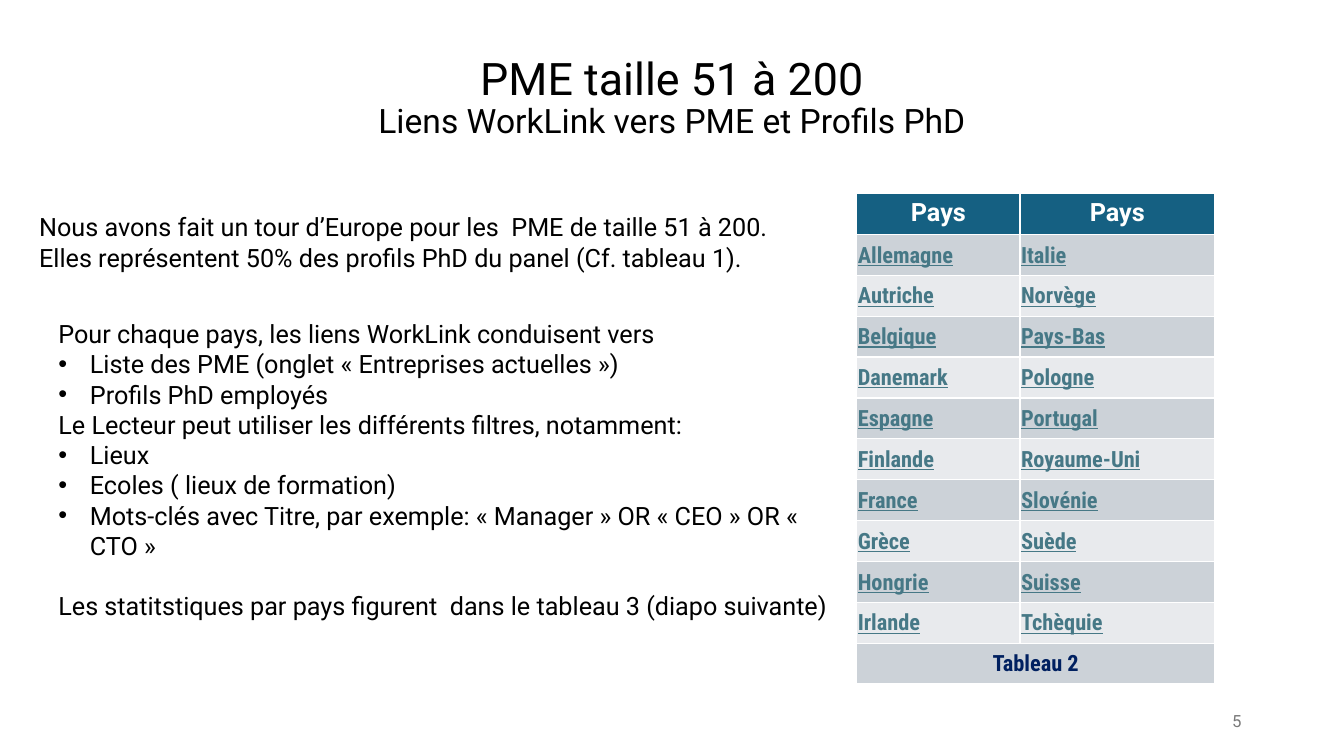
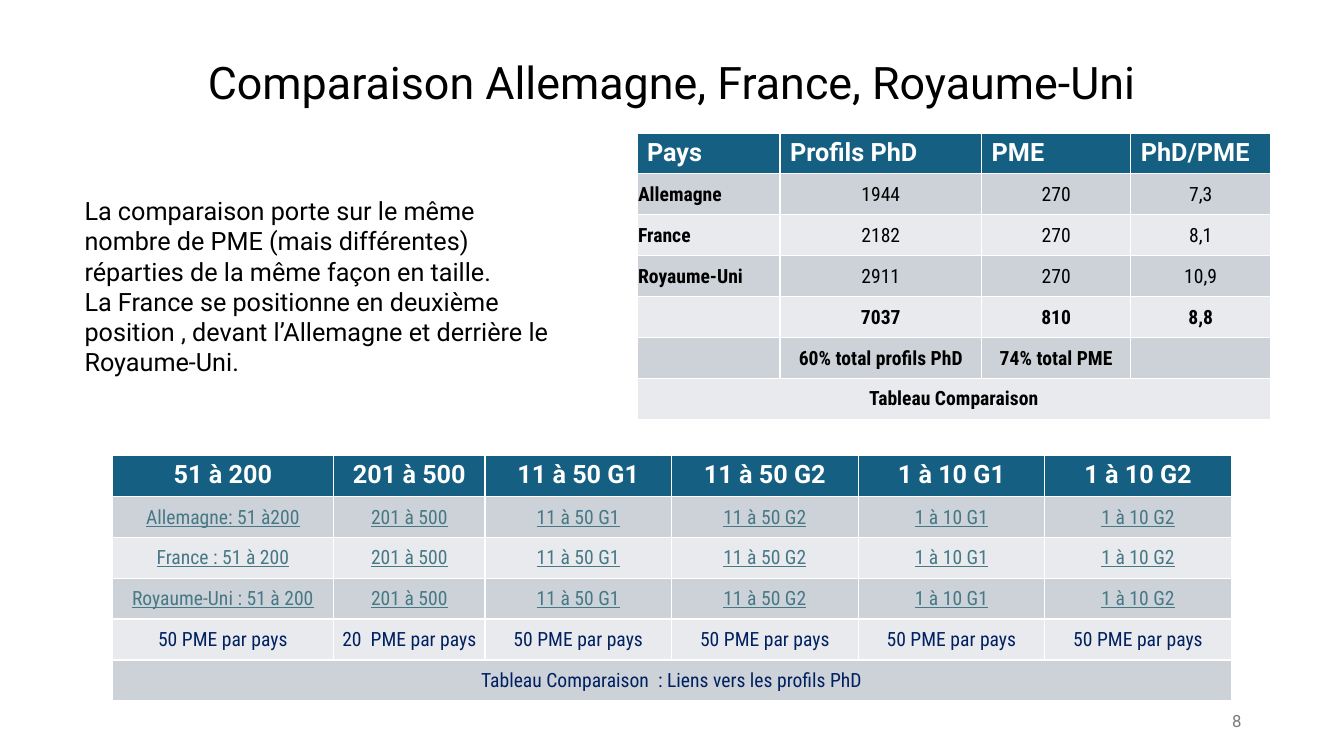
from dataclasses import dataclass, replace
from typing import Optional

from lxml.etree import SubElement
from pptx import Presentation
from pptx.dml.color import RGBColor
from pptx.enum.text import MSO_ANCHOR, MSO_AUTO_SIZE, PP_ALIGN
from pptx.oxml.ns import qn
from pptx.presentation import Presentation as Deck
from pptx.slide import Slide
from pptx.text.text import Font
from pptx.util import Pt

ROW_HEIGHT = 29.2
BULLET_INDENT = 22.5
HEADER_FILL = "156082"
BAND_FILLS = ("CCD2D8", "E8EAED")
LINK_COLOR = "467886"
NAVY = "002060"


@dataclass(frozen=True)
class TextStyle:
    size: float
    color: str = "000000"
    font: str = "Roboto"
    bold: bool = False
    underline: bool = False
    align: PP_ALIGN = PP_ALIGN.LEFT


@dataclass(frozen=True)
class Box:
    left: float
    top: float
    width: float
    height: float


@dataclass(frozen=True)
class Line:
    text: str
    bullet: bool = False
    space_before: float = 0


@dataclass(frozen=True)
class Row:
    """A row of cells; a single text spans the whole table."""
    texts: tuple[str, ...]
    style: TextStyle
    first_style: Optional[TextStyle] = None


BODY = TextStyle(18)
PAGE_NUMBER = TextStyle(12, "797979", align=PP_ALIGN.RIGHT)
HEADER_LEFT = TextStyle(18, "FFFFFF", bold=True)
HEADER = replace(HEADER_LEFT, align=PP_ALIGN.CENTER)
COUNTRY_LINK = TextStyle(16, LINK_COLOR, "Roboto Condensed", True, True)
COUNTRY_CAPTION = replace(COUNTRY_LINK, color=NAVY, underline=False, align=PP_ALIGN.CENTER)
FIGURE = TextStyle(14, font="Roboto Condensed", align=PP_ALIGN.CENTER)
TOTAL = replace(FIGURE, bold=True)
COUNTRY_NAME = replace(TOTAL, align=PP_ALIGN.LEFT)
PROFILE_LINK = replace(FIGURE, color=LINK_COLOR, underline=True)
PROFILE_NOTE = replace(FIGURE, color=NAVY)


def rgb(color: str) -> RGBColor:
    return RGBColor.from_string(color)


def apply_font(font: Font, style: TextStyle) -> None:
    font.name = style.font
    font.size = Pt(style.size)
    font.bold = style.bold
    font.underline = style.underline
    font.color.rgb = rgb(style.color)


def add_titled_slide(presentation: Deck, title_lines: list[tuple[str, float]],
                     title_height: float, number: str) -> Slide:
    """Add a slide with its title, given as (text, size) lines, and page number."""
    slide = presentation.slides.add_slide(presentation.slide_layouts[5])
    title = slide.shapes.title
    title.left, title.top = Pt(66), Pt(28.8)
    title.width, title.height = Pt(828), Pt(title_height)
    frame = title.text_frame
    frame.auto_size = MSO_AUTO_SIZE.NONE
    frame.vertical_anchor = MSO_ANCHOR.MIDDLE
    paragraph = frame.paragraphs[0]
    paragraph.alignment = PP_ALIGN.CENTER
    paragraph.line_spacing = 0.9
    for index, (text, size) in enumerate(title_lines):
        if index:
            paragraph.add_line_break()
        run = paragraph.add_run()
        run.text = text
        apply_font(run.font, TextStyle(size))
    add_text(slide, Box(678, 500.4, 216, 28.8), [Line(number)], PAGE_NUMBER, MSO_ANCHOR.MIDDLE)
    return slide


def add_text(slide: Slide, box: Box, lines: list[Line], style: TextStyle = BODY,
             anchor: MSO_ANCHOR = MSO_ANCHOR.TOP) -> None:
    shape = slide.shapes.add_textbox(Pt(box.left), Pt(box.top), Pt(box.width), Pt(box.height))
    frame = shape.text_frame
    frame.word_wrap = True
    frame.vertical_anchor = anchor
    for index, line in enumerate(lines):
        paragraph = frame.add_paragraph() if index else frame.paragraphs[0]
        paragraph.text = line.text
        paragraph.alignment = style.align
        if line.space_before:
            paragraph.space_before = Pt(line.space_before)
        if line.bullet:
            properties = paragraph._p.get_or_add_pPr()
            properties.set("marL", str(Pt(BULLET_INDENT)))
            properties.set("indent", str(-Pt(BULLET_INDENT)))
            SubElement(properties, qn("a:buFont"), typeface="Arial")
            SubElement(properties, qn("a:buChar"), char="•")
        apply_font(paragraph.font, style)


def add_table(slide: Slide, left: float, top: float, widths: list[float],
              rows: list[Row]) -> None:
    """Add a table whose first row is the header and whose other rows are banded."""
    table = slide.shapes.add_table(len(rows), len(widths), Pt(left), Pt(top),
                                   Pt(sum(widths)), Pt(ROW_HEIGHT * len(rows))).table
    table.horz_banding = False
    for column, width in zip(table.columns, widths):
        column.width = Pt(width)
    for row_index, row in enumerate(rows):
        table.rows[row_index].height = Pt(ROW_HEIGHT)
        if len(row.texts) == 1:
            table.cell(row_index, 0).merge(table.cell(row_index, len(widths) - 1))
        for column_index, text in enumerate(row.texts):
            cell = table.cell(row_index, column_index)
            cell.fill.solid()
            if row_index == 0:
                cell.fill.fore_color.rgb = rgb(HEADER_FILL)
            else:
                cell.fill.fore_color.rgb = rgb(BAND_FILLS[(row_index - 1) % 2])
                cell.vertical_anchor = MSO_ANCHOR.MIDDLE
                cell.margin_left = cell.margin_right = cell.margin_top = Pt(0.75)
                cell.margin_bottom = 0
            style = row.first_style if row.first_style and column_index == 0 else row.style
            paragraph = cell.text_frame.paragraphs[0]
            paragraph.text = text
            paragraph.alignment = style.align
            apply_font(paragraph.font, style)


def build_links_slide(presentation: Deck) -> None:
    slide = add_titled_slide(
        presentation,
        [("PME taille 51 à 200", 32), ("Liens WorkLink vers PME et Profils PhD", 24)],
        83.5, "5")
    countries = [
        ("Allemagne", "Italie"), ("Autriche", "Norvège"), ("Belgique", "Pays-Bas"),
        ("Danemark", "Pologne"), ("Espagne", "Portugal"), ("Finlande", "Royaume-Uni"),
        ("France", "Slovénie"), ("Grèce", "Suède"), ("Hongrie", "Suisse"),
        ("Irlande", "Tchèquie"),
    ]
    add_table(slide, 612, 138.25, [116.6, 139], [
        Row(("Pays", "Pays"), HEADER),
        *(Row(pair, COUNTRY_LINK) for pair in countries),
        Row(("Tableau 2",), COUNTRY_CAPTION),
    ])
    add_text(slide, Box(20.9, 147.6, 545, 51), [
        Line("Nous avons fait un tour d’Europe pour les  PME de taille 51 à 200."),
        Line("Elles représentent 50% des profils PhD du panel (Cf. tableau 1)."),
    ])
    add_text(slide, Box(34.6, 224, 570.2, 203.8), [
        Line("Pour chaque pays, les liens WorkLink conduisent vers"),
        Line("Liste des PME (onglet « Entreprises actuelles »)", bullet=True),
        Line("Profils PhD employés", bullet=True),
        Line("Le Lecteur peut utiliser les différents filtres, notamment:"),
        Line("Lieux", bullet=True),
        Line("Ecoles ( lieux de formation)", bullet=True),
        Line("Mots-clés avec Titre, par exemple: « Manager » OR « CEO » OR « CTO »",
             bullet=True),
        Line("Les statitstiques par pays figurent  dans le tableau 3 (diapo suivante)",
             space_before=21.6),
    ])


def build_comparison_slide(presentation: Deck) -> None:
    slide = add_titled_slide(
        presentation, [("Comparaison Allemagne, France, Royaume-Uni", 32)], 63.4, "8")
    sizes = ("201 à 500", "11 à 50 G1", "11 à 50 G2", "1 à 10 G1", "1 à 10 G2")
    link_labels = ("Allemagne: 51 à200", "France : 51 à 200", "Royaume-Uni : 51 à 200")
    fifty = "50 PME par pays"
    add_table(slide, 80, 325.4, [158.4, 108] + [133.3] * 4, [
        Row(("51 à 200", *sizes), HEADER),
        *(Row((label, *sizes), PROFILE_LINK) for label in link_labels),
        Row((fifty, "20  PME par pays", *[fifty] * 4), PROFILE_NOTE),
        Row(("Tableau Comparaison  : Liens vers les profils PhD",), PROFILE_NOTE),
    ])
    add_table(slide, 455, 95, [102.2, 144, 106.5, 100], [
        Row(("Pays", "Profils PhD", "PME", "PhD/PME"), HEADER_LEFT),
        Row(("Allemagne", "1944", "270", "7,3"), FIGURE, COUNTRY_NAME),
        Row(("France", "2182", "270", "8,1"), FIGURE, COUNTRY_NAME),
        Row(("Royaume-Uni", "2911", "270", "10,9"), FIGURE, COUNTRY_NAME),
        Row(("", "7037", "810", "8,8"), TOTAL),
        Row(("", "60% total profils PhD", "74% total PME", ""), TOTAL),
        Row(("Tableau Comparaison",), TOTAL),
    ])
    add_text(slide, Box(53.3, 136, 353.5, 138.2), [
        Line("La comparaison porte sur le même nombre de PME (mais différentes) "
             "réparties de la même façon en taille."),
        Line("La France se positionne en deuxième position , devant l’Allemagne "
             "et derrière le"),
        Line("Royaume-Uni."),
    ])


def main() -> None:
    presentation = Presentation()
    presentation.slide_width, presentation.slide_height = Pt(960), Pt(540)
    build_links_slide(presentation)
    build_comparison_slide(presentation)
    presentation.save("out.pptx")


if __name__ == "__main__":
    main()
